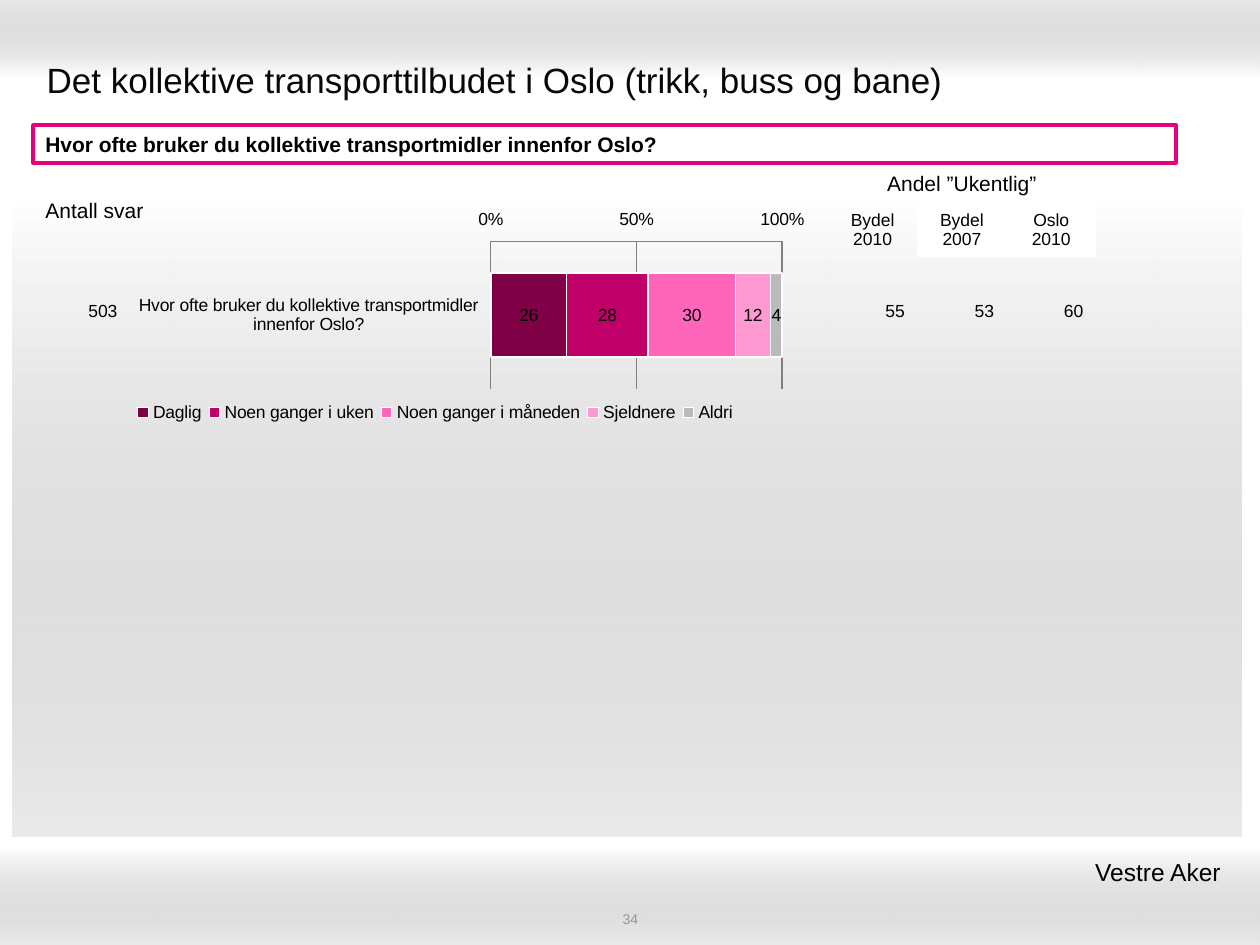
from lxml.etree import SubElement
from pptx import Presentation
from pptx.chart.data import CategoryChartData
from pptx.dml.color import RGBColor
from pptx.enum.chart import XL_CHART_TYPE as ChartType, XL_LEGEND_POSITION as LegendPos
from pptx.enum.chart import XL_TICK_LABEL_POSITION as TickLabels, XL_TICK_MARK as TickMark
from pptx.enum.shapes import MSO_SHAPE as Preset
from pptx.enum.text import MSO_ANCHOR as Anchor, PP_ALIGN as Align
from pptx.oxml import parse_xml
from pptx.oxml.ns import nsdecls, qn
from pptx.util import Pt

PX = 914400 / 126
COLORS = {name: RGBColor.from_string(value) for name, value in {
    "white": "FFFFFF", "shade": "999999", "title": "080808", "text": "000000",
    "number": "969696", "accent": "E7007E", "axis": "808080"}.items()}
NO_GRID_STYLE = "{2D5ABB26-0587-4C30-8999-92F81FD0307C}"
QUESTION = "Hvor ofte bruker du kollektive transportmidler innenfor Oslo?"


def write(frame, text, size, align=Align.LEFT, color="text", bold=False):
    frame.text = text
    for paragraph in frame.paragraphs:
        paragraph.alignment = align
        for key, value in {"name": "Arial", "size": Pt(size), "bold": bold}.items():
            setattr(paragraph.font, key, value)
        paragraph.font.color.rgb = COLORS[color]


def add_grid(box, row_heights, rows, sizes, align):
    left, top, width, height = [int(v * PX) for v in box]
    grid = slide.shapes.add_table(len(rows), len(rows[0]), left, top, width, height).table
    grid.first_row = grid.horz_banding = False
    grid._tbl.tblPr.find(qn("a:tableStyleId")).text = NO_GRID_STYLE
    for r, (row, row_height, size) in enumerate(zip(rows, row_heights, sizes)):
        grid.rows[r].height = int(row_height * PX)
        for c, text in enumerate(row):
            cell = grid.cell(r, c)
            cell.vertical_anchor = Anchor.MIDDLE
            cell.fill.background()
            write(cell.text_frame, text, size, align)
    return grid


prs = Presentation()
prs.slide_width, prs.slide_height = int(1260 * PX), int(945 * PX)
slide = prs.slides.add_slide(prs.slide_layouts[5])

# Shaded background bands: white fading to translucent grey
for left, top, width, height, angle in [
        (0, 0, 1260, 78, 90), (0, 847, 1260, 98, 270), (13, 197, 1228, 640, 270)]:
    band = slide.shapes.add_shape(
        Preset.RECTANGLE, *[int(v * PX) for v in (left, top, width, height)])
    band.shadow.inherit = False
    band.line.fill.background()
    band.fill.gradient()
    band.fill.gradient_angle = angle
    for stop, name in zip(band.fill.gradient_stops, ("white", "shade")):
        stop.color.rgb = COLORS[name]
    shade = band._element.spPr.findall(".//" + qn("a:srgbClr"))[-1]
    SubElement(shade, qn("a:alpha"), val="20000")

# Title, in front of the bands
title = slide.shapes.title
slide.shapes._spTree.append(title._element)
title.left, title.top, title.width, title.height = [int(v * PX) for v in (34, 45, 1191, 69)]
title.text_frame.vertical_anchor = Anchor.MIDDLE
write(title.text_frame, "Det kollektive transporttilbudet i Oslo (trikk, buss og bane)",
      20, color="title")

# Question box
question = slide.shapes.add_shape(
    Preset.RECTANGLE, *[int(v * PX) for v in (33, 125, 1143, 38)])
question.shadow.inherit = False
question.fill.solid()
question.fill.fore_color.rgb = COLORS["white"]
question.line.color.rgb = COLORS["accent"]
question.line.width = Pt(2)
question.text_frame.word_wrap = True
write(question.text_frame, QUESTION, 12, bold=True)

# Stacked answer bar
answers = [("Daglig", 26, "800046"), ("Noen ganger i uken", 28, "BF0069"),
           ("Noen ganger i måneden", 30, "FF66BA"), ("Sjeldnere", 12, "FF99D1"),
           ("Aldri", 4, "BABABA")]
data = CategoryChartData()
data.categories = [QUESTION]
for answer, share, _ in answers:
    data.add_series(answer, [share])
chart = slide.shapes.add_chart(
    ChartType.BAR_STACKED, *[int(v * PX) for v in (123, 205, 694, 227)], data).chart
chart.has_title = False
chart.font.name, chart.font.size = "Arial", Pt(10)
chart.font.color.rgb = COLORS["text"]
chart.has_legend = True
chart.legend.position = LegendPos.BOTTOM
chart.legend.include_in_layout = False

bar = chart.plots[0]
bar.gap_width, bar.overlap, bar.vary_by_categories = 75, 100, False
for series, (_, _, color) in zip(bar.series, answers):
    series.format.fill.solid()
    series.format.fill.fore_color.rgb = RGBColor.from_string(color)
    series.format.line.color.rgb = COLORS["white"]
    series.format.line.width = Pt(1)
    labels = series.data_labels
    for key, value in {"show_value": True, "number_format": "0",
                       "number_format_is_linked": False}.items():
        setattr(labels, key, value)

questions, percent = chart.category_axis, chart.value_axis
questions.reverse_order = True
questions.major_tick_mark = TickMark.NONE
for key, value in {"minimum_scale": 0, "maximum_scale": 100, "major_unit": 50,
                   "has_major_gridlines": True, "major_tick_mark": TickMark.INSIDE}.items():
    setattr(percent, key, value)
percent.tick_labels.number_format = "General\\%"
percent.tick_labels.number_format_is_linked = False
for axis in (questions, percent):
    axis.tick_label_position = TickLabels.LOW
    axis.format.line.color.rgb = COLORS["axis"]
percent.major_gridlines.format.line.color.rgb = COLORS["axis"]

# Fixed places for the plot and the legend, as fractions of the chart
plot_area = chart._chartSpace.chart.plotArea
for old in plot_area.findall(qn("c:layout")):
    plot_area.remove(old)
for parent, index, target, x, y, w, h in [
        (plot_area, 0, '<c:layoutTarget val="inner"/>', 0.53, 0.16, 0.42, 0.65),
        (chart.legend._element, 1, "", 0.01, 0.86, 0.88, 0.11)]:
    parent.insert(index, parse_xml(
        f'<c:layout {nsdecls("c")}><c:manualLayout>{target}'
        '<c:xMode val="edge"/><c:yMode val="edge"/>'
        f'<c:x val="{x}"/><c:y val="{y}"/><c:w val="{w}"/><c:h val="{h}"/>'
        '</c:manualLayout></c:layout>'))

# Weekly shares, their headings and the number of answers
add_grid((828, 275, 268, 72), [72], [["55", "53", "60"]], [10], Align.RIGHT)
headings = add_grid((828, 165, 268, 92), [38, 54],
                    [["Andel ”Ukentlig”", "", ""],
                     ["Bydel\n2010", "Bydel\n2007", "Oslo\n2010"]], [12, 10], Align.CENTER)
headings.cell(0, 0).merge(headings.cell(0, 2))
for column in (1, 2):
    fill = headings.cell(1, column).fill
    fill.solid()
    fill.fore_color.rgb = COLORS["white"]
add_grid((64, 276, 66, 71), [71], [["503"]], [10], Align.RIGHT)
add_grid((5, 174, 179, 74), [74], [["Antall svar"]], [12], Align.CENTER)

# District name and page number
district = slide.shapes.add_textbox(*[int(v * PX) for v in (769, 851, 471, 43)]).text_frame
district.word_wrap = True
write(district, "Vestre Aker ", 14, Align.RIGHT)
page = slide.shapes.add_textbox(*[int(v * PX) for v in (431, 910, 399, 18)]).text_frame
for key, value in {"margin_top": 0, "margin_bottom": 0, "word_wrap": True,
                   "vertical_anchor": Anchor.MIDDLE}.items():
    setattr(page, key, value)
write(page, "34", 8, Align.CENTER, "number")

prs.save("out.pptx")
